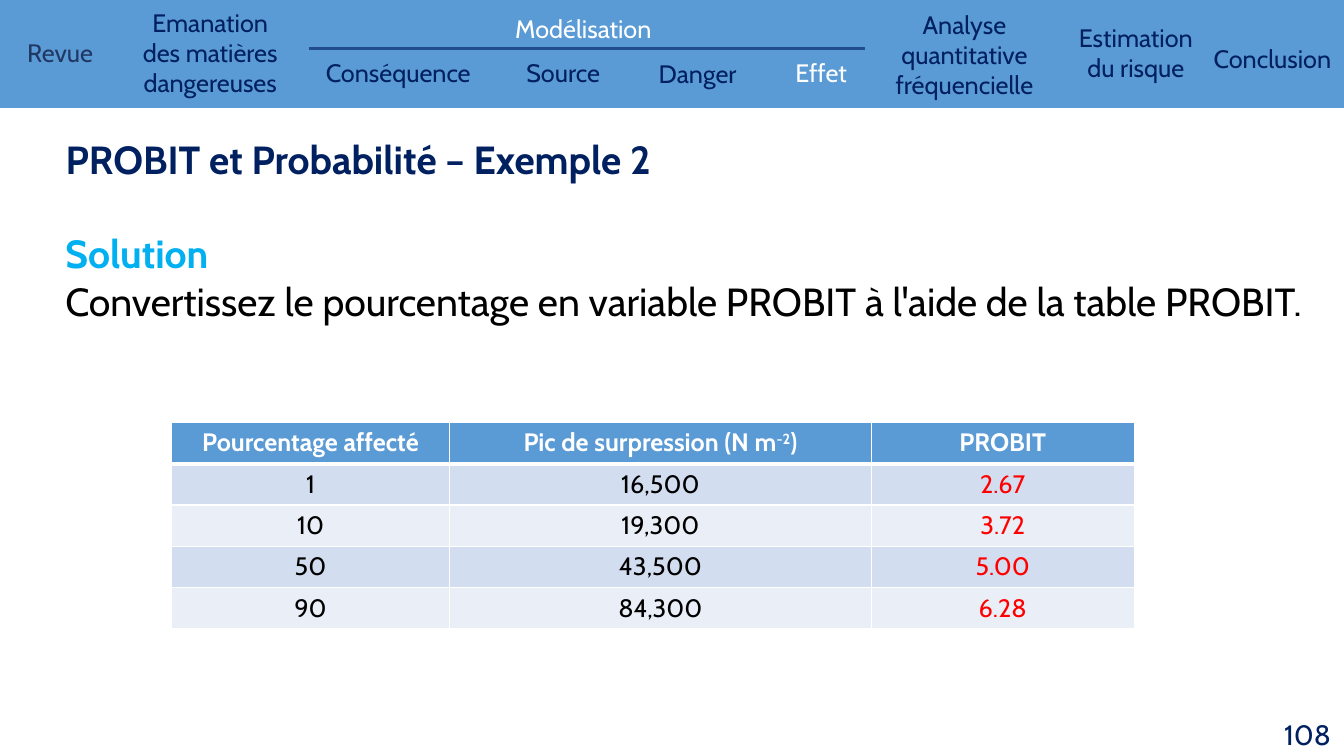
import pptx
import pptx.util
import pptx.dml.color
import pptx.enum.shapes
import pptx.enum.text
import pptx.oxml
import pptx.oxml.ns
from dataclasses import dataclass

Inches = pptx.util.Inches
ALIGN = pptx.enum.text.PP_ALIGN
ANCHOR = pptx.enum.text.MSO_ANCHOR


@dataclass(frozen=True)
class Theme:
    font: str = "Cabin"
    navy: str = "002060"
    slate: str = "203864"
    blue: str = "5B9BD5"
    rule: str = "224D8C"
    cyan: str = "00B0F0"
    red: str = "FF0000"
    black: str = "000000"
    white: str = "FFFFFF"
    bands: tuple = ("D2DEEF", "EAEFF7")
    small: int = 18
    page: int = 20
    large: int = 28


theme = Theme()

# Content
TITLE = "PROBIT et Probabilité – Exemple 2"
BODY = [
    ("Solution", theme.cyan, True),
    ("Convertissez le pourcentage en variable PROBIT à l'aide de la table PROBIT.",
     theme.black, False),
]
PAGE = "108"
NAV = [  # text, colour, left, top, width, height
    ("Revue", theme.slate, 0.17, 0.32, 1.11, 0.4),
    ("Emanation des matières dangereuses", theme.navy, 1.27, 0.02, 1.63, 1),
    ("Modélisation", theme.white, 3.06, 0.08, 5.45, 0.4),
    ("Conséquence", theme.navy, 3.06, 0.52, 1.78, 0.4),
    ("Source", theme.navy, 4.59, 0.52, 1.99, 0.4),
    ("Danger", theme.navy, 6.1, 0.53, 1.64, 0.38),
    ("Effet", theme.white, 7.27, 0.52, 1.75, 0.39),
    ("Analyse quantitative fréquencielle", theme.navy, 8.69, 0.04, 1.75, 0.96),
    ("Estimation\ndu risque", theme.navy, 10.39, 0.17, 1.75, 0.69),
    ("Conclusion", theme.navy, 11.84, 0.38, 1.56, 0.43),
]
# Text between carets is raised
ROWS = [
    ("Pourcentage affecté", "Pic de surpression (N m^-2^)", "PROBIT"),
    ("1", "16,500", "2.67"),
    ("10", "19,300", "3.72"),
    ("50", "43,500", "5.00"),
    ("90", "84,300", "6.28"),
]
WIDTHS = (2.76, 4.18, 2.61)
HEIGHT = 0.41


def tint(code):
    return pptx.dml.color.RGBColor.from_string(code)


def style(para, size, color, bold=False, align=ALIGN.LEFT):
    para.alignment = align
    for run in para.runs:
        font = run.font
        font.name, font.size, font.bold = theme.font, pptx.util.Pt(size), bold
        font.color.rgb = tint(color)


def add_text(slide, text, left, top, width, height):
    box = slide.shapes.add_textbox(*map(Inches, (left, top, width, height)))
    frame = box.text_frame
    frame.word_wrap = True
    frame.text = text
    return frame


def add_edge(cell, side, points):
    xml = (f'<a:ln{side} {pptx.oxml.ns.nsdecls("a")} w="{pptx.util.Pt(points)}">'
           f'<a:solidFill><a:srgbClr val="{theme.white}"/></a:solidFill></a:ln{side}>')
    cell._tc.get_or_add_tcPr().append(pptx.oxml.parse_xml(xml))


def draw_nav(slide):
    # Band
    band = slide.shapes.add_shape(pptx.enum.shapes.MSO_SHAPE.RECTANGLE,
                                  0, 0, Inches(13.33), Inches(1.07))
    band.shadow.inherit = False
    band.fill.solid()
    band.fill.fore_color.rgb = tint(theme.blue)
    band.line.fill.background()
    # Labels
    for text, color, *place in NAV:
        align = ALIGN.LEFT if text == "Revue" else ALIGN.CENTER
        for para in add_text(slide, text, *place).paragraphs:
            style(para, theme.small, color, align=align)
    # Rule under the group name
    rule = slide.shapes.add_connector(pptx.enum.shapes.MSO_CONNECTOR.STRAIGHT,
                                      *map(Inches, (3.06, 0.48, 8.58, 0.48)))
    rule.line.color.rgb = tint(theme.rule)
    rule.line.width = pptx.util.Pt(2.25)
    rule._element.spPr.append(
        pptx.oxml.parse_xml(f'<a:effectLst {pptx.oxml.ns.nsdecls("a")}/>'))


def draw_title(slide):
    title = slide.shapes.title
    title.left, title.top, title.width, title.height = map(
        Inches, (0.55, 1.29, 12.75, 0.57))
    frame = title.text_frame
    frame.text = TITLE
    frame.auto_size = pptx.enum.text.MSO_AUTO_SIZE.NONE
    frame.vertical_anchor = ANCHOR.TOP
    style(frame.paragraphs[0], theme.large, theme.navy, True)


def draw_body(slide):
    text = "\n".join(line for line, _, _ in BODY)
    frame = add_text(slide, text, 0.55, 2.23, 12.75, 1.05)
    for para, (_, color, bold) in zip(frame.paragraphs, BODY):
        style(para, theme.large, color, bold)


def draw_table(slide):
    grid = slide.shapes.add_table(
        len(ROWS), len(WIDTHS), Inches(1.7), Inches(4.19),
        Inches(sum(WIDTHS)), Inches(HEIGHT * len(ROWS))).table
    for col, width in zip(grid.columns, WIDTHS):
        col.width = Inches(width)
    for r, row in enumerate(ROWS):
        grid.rows[r].height = Inches(HEIGHT)
        head = r == 0
        for c, text in enumerate(row):
            cell = grid.cell(r, c)
            cell.vertical_anchor = ANCHOR.TOP
            # The edge below the head is thick
            edges = {"L": 1, "R": 1, "T": 3 if r == 1 else 1, "B": 3 if head else 1}
            for side, points in edges.items():
                add_edge(cell, side, points)
            cell.fill.solid()
            cell.fill.fore_color.rgb = tint(
                theme.blue if head else theme.bands[(r - 1) % 2])
            para = cell.text_frame.paragraphs[0]
            for i, part in enumerate(text.split("^")):
                run = para.add_run()
                run.text = part
                if i % 2:
                    run._r.get_or_add_rPr().set("baseline", "30000")
            color = theme.white if head else theme.red if c == 2 else theme.black
            style(para, theme.small, color, head, ALIGN.CENTER)


def draw_page(slide):
    frame = add_text(slide, PAGE, 10.19, 7.08, 3.11, 0.4)
    frame.vertical_anchor = ANCHOR.MIDDLE
    style(frame.paragraphs[0], theme.page, theme.navy, align=ALIGN.RIGHT)


def main():
    deck = pptx.Presentation()
    deck.slide_width, deck.slide_height = Inches(13.33), Inches(7.5)
    slide = deck.slides.add_slide(deck.slide_layouts[5])
    for draw in (draw_nav, draw_title, draw_body, draw_table, draw_page):
        draw(slide)
    deck.save("out.pptx")


if __name__ == "__main__":
    main()
